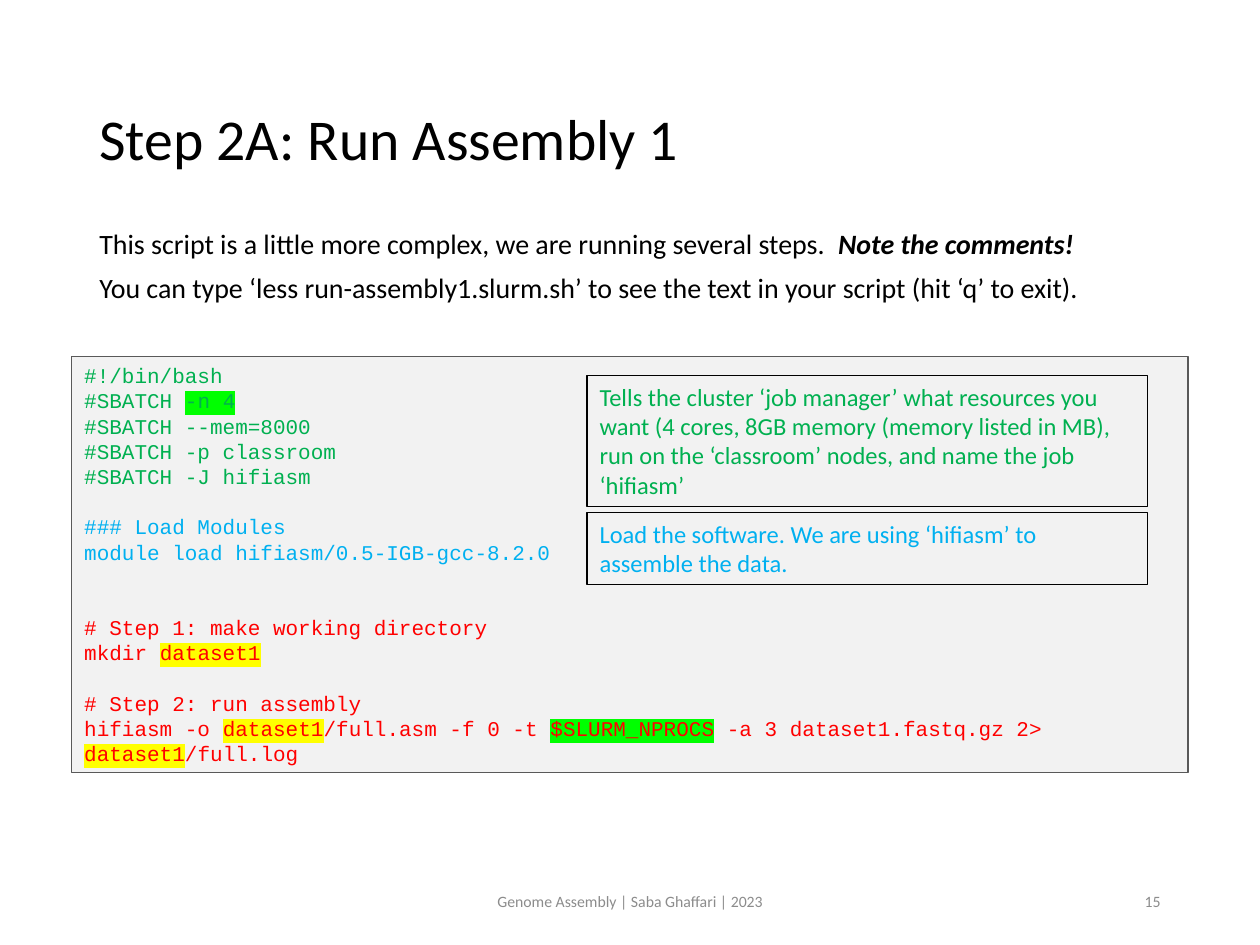
from lxml.etree import SubElement
from pptx import Presentation
from pptx.dml.color import RGBColor
from pptx.enum.shapes import MSO_SHAPE
from pptx.enum.text import MSO_ANCHOR, PP_ALIGN
from pptx.oxml.ns import qn
from pptx.util import Inches, Pt

COLORS = {
    "black": "000000", "gray": "8C8C8C", "panel": "F2F2F2", "edge": "595959",
    "green": "00B050", "blue": "00B0F0", "red": "FF0000",
    "lime": "00FF00", "yellow": "FFFF00",
}
LINE = Pt(14.4)  # pitch of the code lines


def rgb(name):
    return RGBColor.from_string(COLORS[name])


class Deck:
    def __init__(self, slide):
        self.slide = slide
        self.font = {"name": "Calibri", "size": Pt(16)}

    def run(self, para, text, color, mark=None, **style):
        """Add one run, with an optional highlight colour."""
        run = para.add_run()
        run.text = text
        run.font.fill.solid()
        run.font.fill.fore_color.rgb = rgb(color)
        if mark:
            light = SubElement(run.font._element, qn("a:highlight"))
            SubElement(light, qn("a:srgbClr")).set("val", COLORS[mark])
        for key, value in {**self.font, **style}.items():
            setattr(run.font, key, value)

    def fill(self, shape, paras, color, anchor=MSO_ANCHOR.TOP, form=None, **style):
        """Write paragraphs, each a list of (text, extra style) runs."""
        frame = shape.text_frame
        frame.word_wrap = True
        frame.vertical_anchor = anchor
        for i, runs in enumerate(paras):
            para = frame.paragraphs[0] if i == 0 else frame.add_paragraph()
            for key, value in {"alignment": PP_ALIGN.LEFT, **(form or {})}.items():
                setattr(para, key, value)
            for text, extra in runs:
                self.run(para, text, color, **{**style, **extra})
        return frame

    def text(self, box, paras, color="black", **style):
        shape = self.slide.shapes.add_textbox(*map(Inches, box))
        return self.fill(shape, paras, color, **style)

    def rect(self, box, edge, back=None):
        shape = self.slide.shapes.add_shape(MSO_SHAPE.RECTANGLE, *map(Inches, box))
        shape.shadow.inherit = False
        shape.line.color.rgb = rgb(edge)
        shape.line.width = Pt(0.75)
        if back:
            shape.fill.solid()
            shape.fill.fore_color.rgb = rgb(back)
        else:
            shape.fill.background()
        return shape

    def note(self, box, text, color):
        self.fill(self.rect(box, "black"), [[(text, {})]], color, size=Pt(14))

    def code(self, box, blocks):
        """Write (blank lines before, colour, lines) blocks in a panel."""
        frame = self.rect(box, "edge", "panel").text_frame
        frame.word_wrap = True
        frame.vertical_anchor = MSO_ANCHOR.TOP
        para = frame.paragraphs[0]
        for gap, color, lines in blocks:
            for i, line in enumerate(lines):
                if para is None:
                    para = frame.add_paragraph()
                para.alignment = PP_ALIGN.LEFT
                para.line_spacing = LINE
                para.space_before = gap * LINE if i == 0 else 0
                for text, mark in line:
                    self.run(para, text, color, mark, name="Courier New", size=Pt(12))
                para = None


def main():
    deck = Presentation()
    deck.slide_width, deck.slide_height = Inches(10), Inches(7.5)
    page = Deck(deck.slides.add_slide(deck.slide_layouts[6]))

    # Title and introduction
    page.text((0.69, 0.4, 8.62, 1.45), [[("Step 2A: Run Assembly 1", {})]],
              anchor=MSO_ANCHOR.MIDDLE, form={"line_spacing": 0.9}, size=Pt(33))
    page.text((0.69, 1.67, 8.6, 1.3), [
        [("This script is a little more complex, we are running several steps.  ", {}),
         ("Note the comments!", {"bold": True, "italic": True})],
        [("You can type ‘less run-assembly1.slurm.sh’ to see the text in your "
          "script (hit ‘q’ to exit).", {})],
    ], form={"line_spacing": 1.3})

    # Footer and slide number
    for box, text, align in (
        ((3.31, 6.95, 3.38, 0.4), "Genome Assembly | Saba Ghaffari | 2023", PP_ALIGN.CENTER),
        ((7.06, 6.95, 2.25, 0.4), "15", PP_ALIGN.RIGHT),
    ):
        page.text(box, [[(text, {})]], "gray", anchor=MSO_ANCHOR.MIDDLE,
                  form={"alignment": align}, size=Pt(9))

    # Script panel
    data = ("dataset1", "yellow")
    page.code((0.57, 2.83, 8.86, 3.3), [
        (0, "green", [
            [("#!/bin/bash", None)],
            [("#SBATCH ", None), ("-n 4", "lime")],
            [("#SBATCH --mem=8000", None)],
            [("#SBATCH -p classroom", None)],
            [("#SBATCH -J hifiasm", None)],
        ]),
        (1, "blue", [
            [("### Load Modules", None)],
            [("module load hifiasm/0.5-IGB-gcc-8.2.0", None)],
        ]),
        (2, "red", [
            [("# Step 1: make working directory", None)],
            [("mkdir ", None), data],
        ]),
        (1, "red", [
            [("# Step 2: run assembly", None)],
            [("hifiasm -o ", None), data, ("/full.asm -f 0 -t ", None),
             ("$SLURM_NPROCS", "lime"), (" -a 3 dataset1.fastq.gz 2> ", None),
             data, ("/full.log", None)],
        ]),
    ])

    # Notes beside the script
    page.note((4.66, 2.98, 4.45, 1.04),
              "Tells the cluster ‘job manager’ what resources you want (4 cores, "
              "8GB memory (memory listed in MB), run on the ‘classroom’ nodes, "
              "and name the job ‘hifiasm’", "green")
    page.note((4.66, 4.07, 4.45, 0.57),
              "Load the software.\xa0We are using ‘hifiasm’ to assemble the data.", "blue")

    deck.save("out.pptx")


if __name__ == "__main__":
    main()
